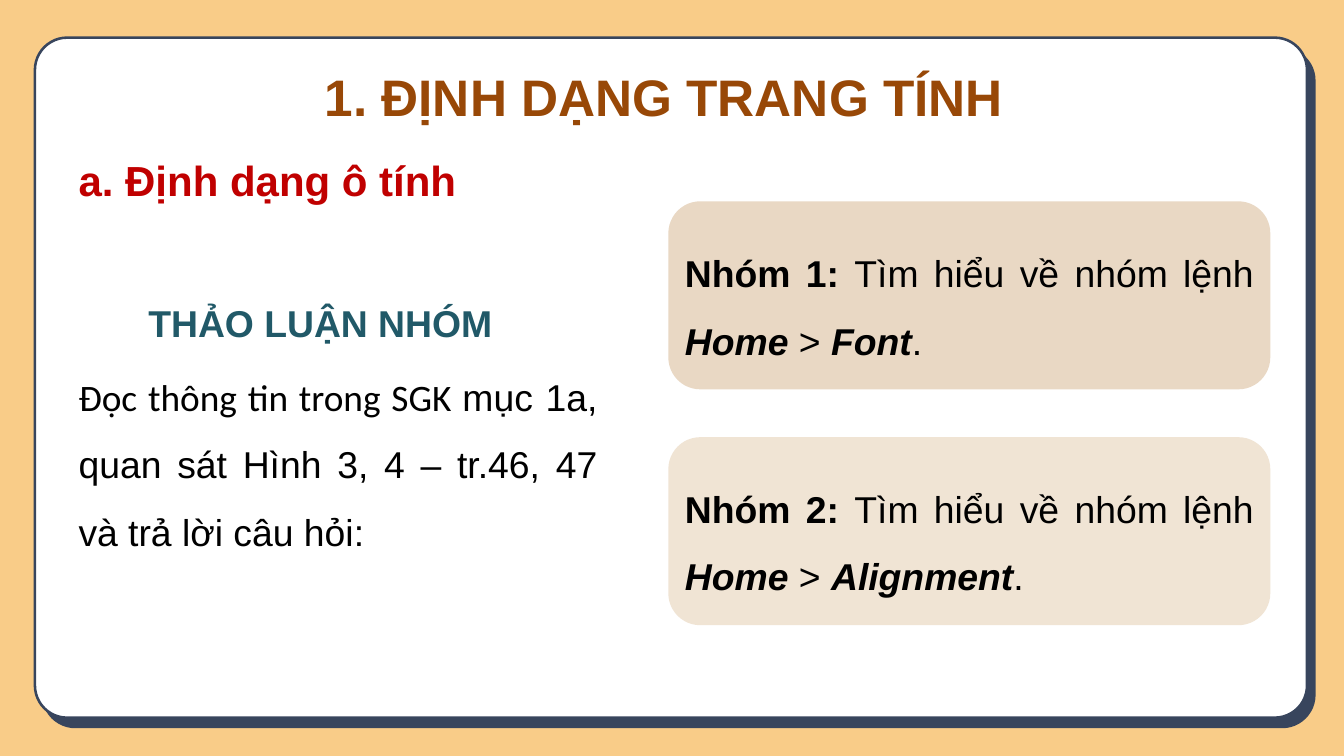
from pptx import Presentation
from pptx.dml.color import RGBColor
from pptx.enum.shapes import MSO_SHAPE
from pptx.enum.text import MSO_ANCHOR, MSO_AUTO_SIZE, PP_ALIGN
from pptx.util import Inches, Pt

ROUND = MSO_SHAPE.ROUNDED_RECTANGLE
MIDDLE = MSO_ANCHOR.MIDDLE
GROW = MSO_AUTO_SIZE.SHAPE_TO_FIT_TEXT
LEFT, CENTER, JUSTIFY = PP_ALIGN.LEFT, PP_ALIGN.CENTER, PP_ALIGN.JUSTIFY

COLORS = {
    "back": "F9CC88", "navy": "38455D", "white": "FFFFFF", "black": "000000",
    "brown": "984807", "red": "C00000", "teal": "215968",
    "tan": "E9D8C4", "cream": "F0E4D4",
}


def color(name):
    return RGBColor.from_string(COLORS[name])


def write(frame, *runs, size=40, ink="black", align=LEFT, space=1.0):
    """Fill a frame with one paragraph of (text, format) runs."""
    frame.word_wrap = True
    para = frame.paragraphs[0]
    para.alignment, para.line_spacing = align, space
    for text, style in runs:
        run = para.add_run()
        run.text = text
        font = run.font
        font.name = style.get("font", "Arial")
        font.size = Pt(size)
        font.bold = style.get("bold", False)
        font.italic = style.get("italic", False)
        font.color.rgb = color(ink)


class Board:
    """Holds the style and the current slide."""

    def __init__(self, deck):
        self.slide = deck.slides.add_slide(deck.slide_layouts[6])
        fill = self.slide.background.fill
        fill.solid()
        fill.fore_color.rgb = color("back")

    def panel(self, left, top, width, height, fill, line, weight=2, radius=None):
        shape = self.slide.shapes.add_shape(
            ROUND, Inches(left), Inches(top), Inches(width), Inches(height))
        shape.shadow.inherit = False
        shape.fill.solid()
        shape.fill.fore_color.rgb = color(fill)
        shape.line.color.rgb = color(line)
        shape.line.width = Pt(weight)
        if radius:
            shape.adjustments[0] = radius / min(width, height)
        return shape

    def label(self, left, top, width, height, *runs, **style):
        box = self.slide.shapes.add_textbox(
            Inches(left), Inches(top), Inches(width), Inches(height))
        write(box.text_frame, *runs, **style)
        box.text_frame.auto_size = GROW

    def task(self, top, fill, group, menu):
        shape = self.panel(9.96, top, 8.93, 2.77, fill, fill)
        shape.text_frame.vertical_anchor = MIDDLE
        strong = {"bold": True, "italic": True}
        write(shape.text_frame, (f"{group}: ", {"bold": True}),
              ("Tìm hiểu về nhóm lệnh ", {}), ("Home", strong),
              (" > ", {}), (menu, strong), (". ", {}),
              align=JUSTIFY, space=1.5)


def main():
    deck = Presentation()
    deck.slide_width, deck.slide_height = Inches(20), Inches(11.25)
    board = Board(deck)
    bold = {"bold": True}

    board.panel(0.64, 0.72, 18.92, 10.1, "navy", "navy", 2.5, 0.48)
    board.panel(0.52, 0.56, 18.93, 10.12, "white", "navy", 2.75, 0.48)

    board.label(4.36, 0.92, 11.25, 1.03, ("1. ĐỊNH DẠNG TRANG TÍNH ", bold),
                size=55, ink="brown", align=CENTER)
    board.label(1.07, 2.25, 6.58, 0.86, ("a. Định dạng ô tính", bold),
                size=45, ink="red")
    board.label(2.11, 4.42, 5.83, 0.77, ("THẢO LUẬN NHÓM", bold), ink="teal")
    board.label(1.07, 5.19, 7.92, 3.01,
                ("Đọc thông tin trong SGK ", {"font": "Calibri"}),
                ("mục 1a, quan sát Hình 3, 4 – tr.46, 47 và trả lời câu hỏi: ", {}),
                align=JUSTIFY, space=1.5)

    tasks = [("tan", "Nhóm 1", "Font"), ("cream", "Nhóm 2", "Alignment")]
    for row, (fill, group, menu) in enumerate(tasks):
        board.task(3.01 + row * 3.51, fill, group, menu)

    deck.save("out.pptx")


if __name__ == "__main__":
    main()
